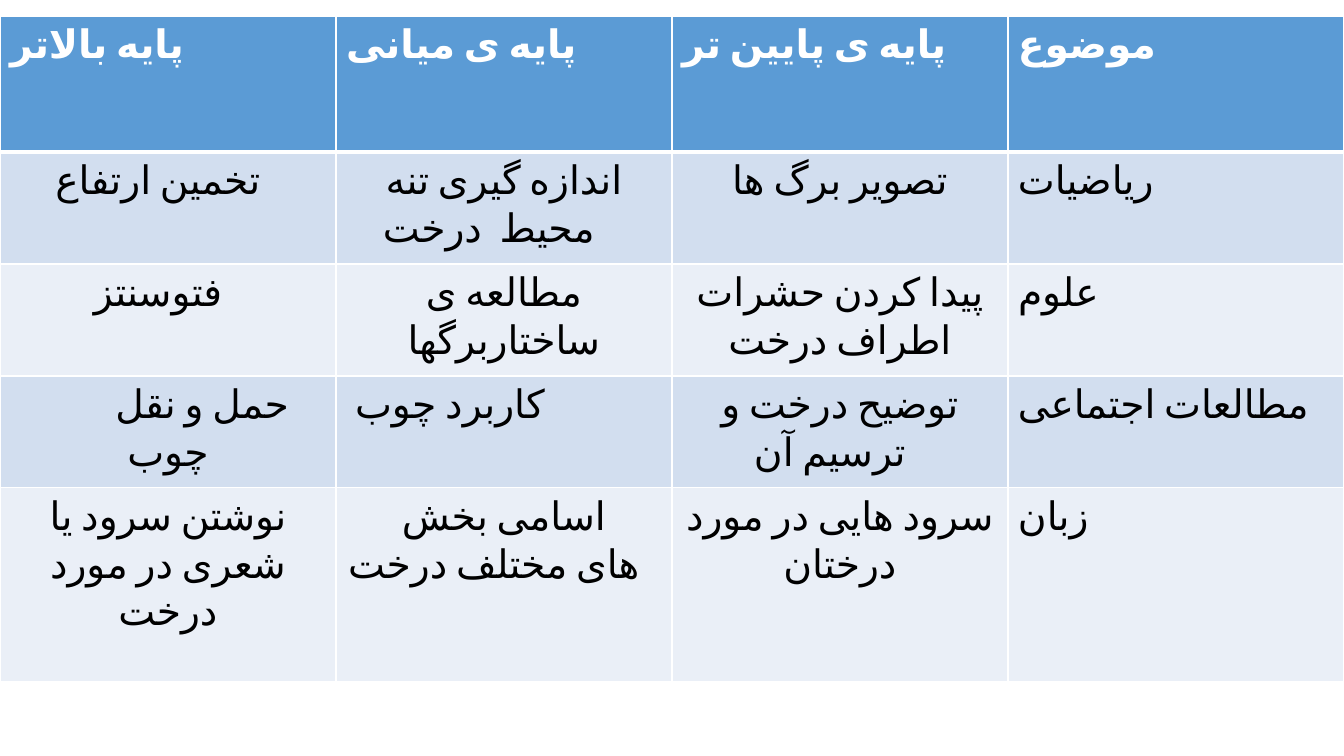
"""Build a slide with a table of tree activities by subject and grade."""
import pptx
import pptx.dml.color
import pptx.enum.lang
import pptx.enum.text
import pptx.oxml
import pptx.oxml.ns
import pptx.util
from pptx.util import Inches

ALIGN = pptx.enum.text.PP_ALIGN


def color(value):
    return pptx.dml.color.RGBColor.from_string(value)


class ActivitySlide:
    font = {
        "name": "Calibri",
        "size": pptx.util.Pt(28),
        "language_id": pptx.enum.lang.MSO_LANGUAGE_ID.FARSI,
    }
    header_fill = "5B9BD5"
    band_fills = ("D2DEEF", "EAEFF7")

    def __init__(self, deck):
        self.slide = deck.slides.add_slide(deck.slide_layouts[6])

    def grid(self, rows, heights, gaps, indents):
        width = Inches(13.33)
        table = self.slide.shapes.add_table(
            len(rows), len(rows[0]), 0, Inches(0.16), width, Inches(sum(heights))
        ).table
        for column in table.columns:
            column.width = width // len(rows[0])
        for r, (texts, height) in enumerate(zip(rows, heights)):
            table.rows[r].height = Inches(height)
            for c, text in enumerate(texts):
                cell = table.cell(r, c)
                self.fill_cell(cell, text, r, c)
                cell.margin_right = Inches(0.1 + gaps.get((r, c), 0))
                if (r, c) in indents:
                    props = cell.text_frame.paragraphs[0]._p.get_or_add_pPr()
                    props.set("indent", str(Inches(indents[r, c])))

    def fill_cell(self, cell, text, r, c):
        header = r == 0
        cell.text = text
        paragraph = cell.text_frame.paragraphs[0]
        paragraph.alignment = ALIGN.LEFT if header or c == 3 else ALIGN.CENTER
        run = paragraph.runs[0]
        for key, value in {**self.font, "bold": header}.items():
            setattr(run.font, key, value)
        run.font.color.rgb = color("FFFFFF" if header else "000000")
        run._r.get_or_add_rPr().append(pptx.oxml.parse_xml(
            f'<a:cs {pptx.oxml.ns.nsdecls("a")} typeface="{self.font["name"]}"/>'
        ))
        cell.fill.solid()
        cell.fill.fore_color.rgb = color(
            self.header_fill if header else self.band_fills[(r - 1) % 2]
        )
        self.border(cell, {"L": 1, "R": 1, "T": 3 if r == 1 else 1, "B": 3 if header else 1})

    def border(self, cell, widths):
        props = cell._tc.get_or_add_tcPr()
        for position, (side, width) in enumerate(widths.items()):
            props.insert(position, pptx.oxml.parse_xml(
                f'<a:ln{side} {pptx.oxml.ns.nsdecls("a")} w="{pptx.util.Pt(width)}">'
                f'<a:solidFill><a:srgbClr val="FFFFFF"/></a:solidFill></a:ln{side}>'
            ))


def main():
    deck = pptx.Presentation()
    deck.slide_width, deck.slide_height = Inches(13.33), Inches(7.5)
    activities = [
        ["پایه بالاتر", "پایه ی میانی", "پایه ی پایین تر", "موضوع"],
        ["تخمین ارتفاع", "اندازه گیری تنه محیط  درخت", "تصویر برگ ها", "ریاضیات"],
        ["فتوسنتز", "مطالعه ی ساختاربرگها", "پیدا کردن حشرات اطراف درخت", "علوم"],
        ["حمل و نقل چوب", "کاربرد چوب", "توضیح درخت و ترسیم آن", "مطالعات اجتماعی"],
        ["نوشتن سرود یا شعری در مورد درخت", "اسامی بخش های مختلف درخت",
         "سرود هایی در مورد درختان", "زبان"],
    ]
    wrapped_gaps = {(1, 1): 0.3, (3, 2): 0.2, (4, 1): 0.2}
    single_gaps = {(1, 0): 0.2, (2, 0): 0.2, (3, 1): 1.07}
    ActivitySlide(deck).grid(
        activities,
        heights=[1.35, 1.11, 1.11, 1.11, 1.92],
        gaps={**wrapped_gaps, **single_gaps},
        indents={**wrapped_gaps, (3, 0): 0.68},
    )
    deck.save("out.pptx")


if __name__ == "__main__":
    main()
